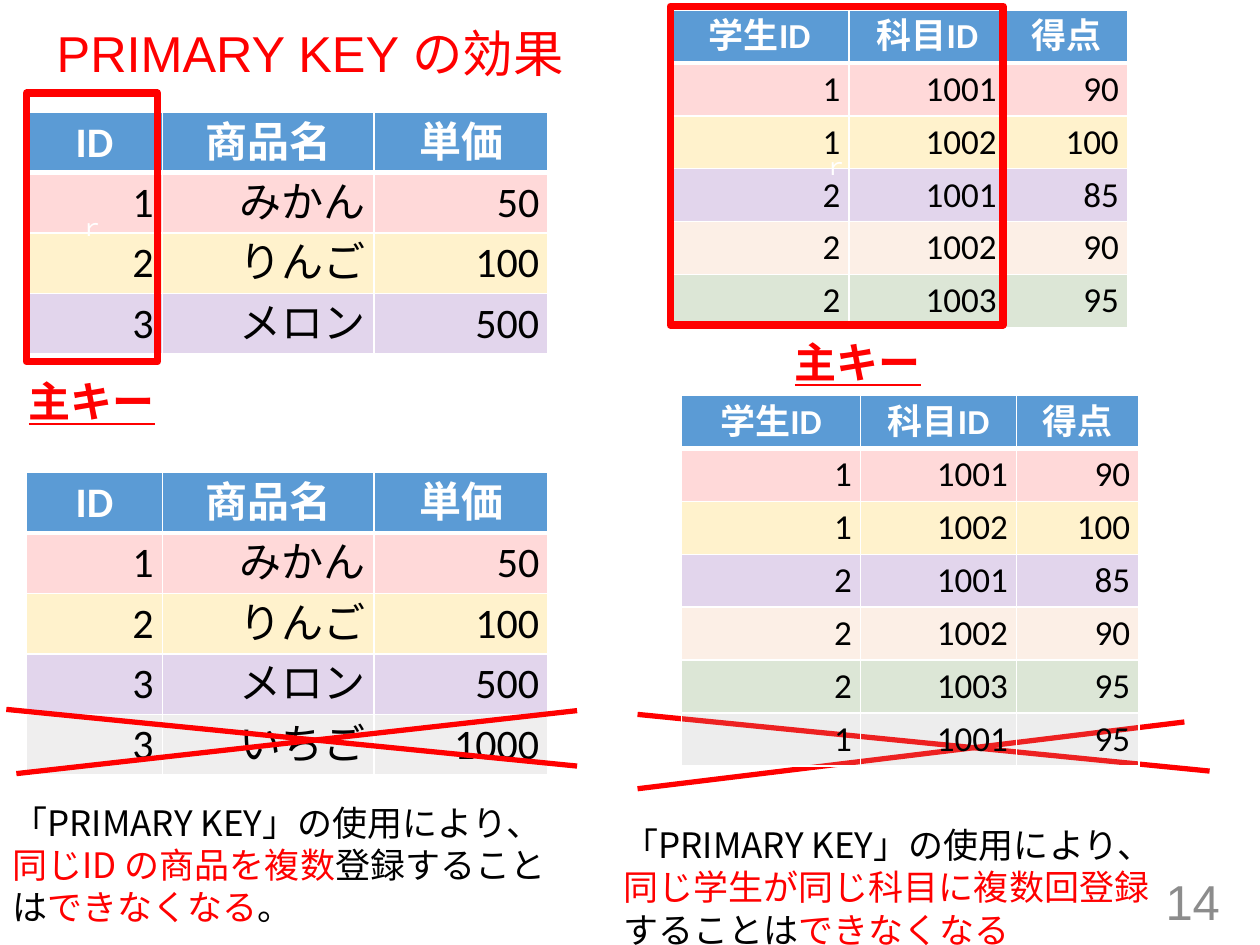
from lxml.etree import SubElement
from pptx import Presentation
from pptx.dml.color import RGBColor
from pptx.enum.shapes import MSO_CONNECTOR, MSO_SHAPE
from pptx.enum.text import MSO_ANCHOR, PP_ALIGN
from pptx.oxml.ns import qn
from pptx.util import Inches, Pt

RED, BLACK, WHITE, BLUE = "FF0000", "000000", "FFFFFF", "5B9BD5"
CJK = "Noto Sans CJK JP"
ROW_TINTS = [("FF0000", 15), ("FFC000", 20), ("7030A0", 20),
             ("F4B183", 20), ("548235", 20)]

PRODUCT_HEADER = ["ID", "商品名", "単価"]
PRODUCTS = [["1", "みかん", "50"], ["2", "りんご", "100"], ["3", "メロン", "500"]]
PRODUCT_COLUMNS = [1.08, 1.68, 1.38]
SCORE_HEADER = ["学生ID", "科目ID", "得点"]
SCORES = [["1", "1001", "90"], ["1", "1002", "100"], ["2", "1001", "85"],
          ["2", "1002", "90"], ["2", "1003", "95"]]
SCORE_COLUMNS = [1.42, 1.24, 0.97]


def rgb(color):
    return RGBColor.from_string(color)


def add_run(paragraph, text, size, color, font=CJK, bold=False, underline=False):
    run = paragraph.add_run()
    run.text = text
    run.font.size = Pt(size)
    run.font.name = font
    run.font.bold = bold
    run.font.underline = underline
    run.font.color.rgb = rgb(color)
    east_asian = SubElement(run.font._element, qn("a:ea"))
    east_asian.set("typeface", font)


def set_borders(cell, bottom_width):
    """Draw white edges; they have to precede the fill in the cell properties."""
    properties = cell._tc.get_or_add_tcPr()
    widths = {"a:lnL": 1, "a:lnR": 1, "a:lnT": 1, "a:lnB": bottom_width}
    for edge, width in widths.items():
        line = SubElement(properties, qn(edge), w=str(Pt(width)))
        fill = SubElement(line, qn("a:solidFill"))
        SubElement(fill, qn("a:srgbClr"), val=WHITE)


def fill_cell(cell, color, opacity):
    cell.fill.solid()
    cell.fill.fore_color.rgb = rgb(color)
    if opacity < 100:
        tint = cell._tc.tcPr.find(qn("a:solidFill")).find(qn("a:srgbClr"))
        SubElement(tint, qn("a:alpha"), val=str(opacity * 1000))


def add_key_table(slide, left, top, columns, row_height, size, header, records,
                  rejected=None, rejected_color=None):
    """Add a table of records, optionally ending in a greyed, rejected record."""
    rows = [header] + records
    tints = [(BLUE, 100)] + ROW_TINTS[:len(records)]
    if rejected:
        rows = rows + [rejected]
        tints.append((rejected_color, 20))
    table = slide.shapes.add_table(
        len(rows), len(columns), Inches(left), Inches(top),
        Inches(sum(columns)), Inches(row_height * len(rows))).table
    for column, width in zip(table.columns, columns):
        column.width = Inches(width)
    for r, (row, tint) in enumerate(zip(rows, tints)):
        is_header = r == 0
        table.rows[r].height = Inches(row_height)
        for c, text in enumerate(row):
            cell = table.cell(r, c)
            cell.margin_left = cell.margin_right = Inches(0.07)
            cell.margin_top = cell.margin_bottom = Inches(0.04)
            set_borders(cell, 3 if is_header else 1)
            fill_cell(cell, *tint)
            paragraph = cell.text_frame.paragraphs[0]
            paragraph.alignment = PP_ALIGN.CENTER if is_header else PP_ALIGN.RIGHT
            add_run(paragraph, text, size, WHITE if is_header else BLACK,
                    "Calibri", bold=is_header)


def add_text(slide, left, top, width, height, wrap=True):
    box = slide.shapes.add_textbox(
        Inches(left), Inches(top), Inches(width), Inches(height))
    box.text_frame.word_wrap = wrap
    return box.text_frame


def add_explanation(slide, left, top, lines):
    frame = add_text(slide, left, top, 5, 1.11)
    for i, line in enumerate(lines):
        paragraph = frame.add_paragraph() if i else frame.paragraphs[0]
        for text, color in line:
            add_run(paragraph, text, 20, color)


def add_key_label(slide, left, top):
    frame = add_text(slide, left, top, 1.21, 0.5, wrap=False)
    add_run(frame.paragraphs[0], "主キー", 24, RED, bold=True, underline=True)


def add_key_frame(slide, left, top, width, height):
    frame = slide.shapes.add_shape(
        MSO_SHAPE.RECTANGLE, Inches(left), Inches(top), Inches(width), Inches(height))
    frame.shadow.inherit = False
    frame.fill.background()
    frame.line.color.rgb = rgb(RED)
    frame.line.width = Pt(4.25)
    frame.text_frame.vertical_anchor = MSO_ANCHOR.MIDDLE
    paragraph = frame.text_frame.paragraphs[0]
    paragraph.alignment = PP_ALIGN.CENTER
    add_run(paragraph, "ｒ", 13.5, WHITE)


def add_cross(slide, *strokes):
    for stroke in strokes:
        line = slide.shapes.add_connector(
            MSO_CONNECTOR.STRAIGHT, *[Inches(value) for value in stroke])
        line.line.color.rgb = rgb(RED)
        line.line.width = Pt(3)
        SubElement(line._element.spPr, qn("a:effectLst"))


def set_title(slide, text):
    title = slide.shapes.title
    title.left, title.top = Inches(0.35), Inches(0.19)
    title.width, title.height = Inches(9.25), Inches(0.51)
    title.text_frame.vertical_anchor = MSO_ANCHOR.MIDDLE
    paragraph = title.text_frame.paragraphs[0]
    paragraph.alignment = PP_ALIGN.LEFT
    paragraph.line_spacing = 0.9
    add_run(paragraph, text, 28.8, RED, "Arial")


def add_page_number(slide, number):
    frame = add_text(slide, 7.53, 6.95, 2.25, 0.4)
    frame.vertical_anchor = MSO_ANCHOR.MIDDLE
    frame.paragraphs[0].alignment = PP_ALIGN.RIGHT
    add_run(frame.paragraphs[0], number, 28, "8C8C8C", "Arial")


def main():
    deck = Presentation()
    deck.slide_width, deck.slide_height = Inches(10), Inches(7.5)
    slide = deck.slides.add_slide(deck.slide_layouts[5])
    products = (PRODUCT_COLUMNS, 0.475, 24, PRODUCT_HEADER, PRODUCTS)
    scores = (SCORE_COLUMNS, 0.42, 20, SCORE_HEADER, SCORES)
    opening = [("「PRIMARY KEY」の使用により、", BLACK)]

    set_title(slide, "PRIMARY KEY の効果")
    add_page_number(slide, "14")

    add_key_table(slide, 0.21, 0.89, *products)
    add_key_frame(slide, 0.21, 0.74, 1.04, 2.13)
    add_key_label(slide, 0.13, 2.93)
    add_key_table(slide, 0.21, 3.75, *products, ["3", "いちご", "1000"], "AFABAB")
    add_cross(slide, (4.58, 5.64, 0.13, 6.14), (4.58, 6.08, 0.05, 5.63))
    add_explanation(slide, 0, 6.31, [
        opening,
        [("同じID の商品を複数", RED), ("登録すること", BLACK)],
        [("は", BLACK), ("できなくなる", RED), ("。", BLACK)]])

    add_key_table(slide, 5.32, 0.08, *scores)
    add_key_frame(slide, 5.32, 0.05, 2.64, 2.53)
    add_key_label(slide, 6.21, 2.62)
    add_cross(slide, (9.4, 5.73, 5.06, 6.26), (9.6, 6.12, 5.06, 5.67))
    add_key_table(slide, 5.41, 3.14, *scores, ["1", "1001", "95"], "A6A6A6")
    add_explanation(slide, 4.85, 6.49, [
        opening,
        [("同じ学生が同じ科目に複数回登録", RED)],
        [("することは", BLACK), ("できなくなる", RED)]])

    deck.save("out.pptx")


if __name__ == "__main__":
    main()
